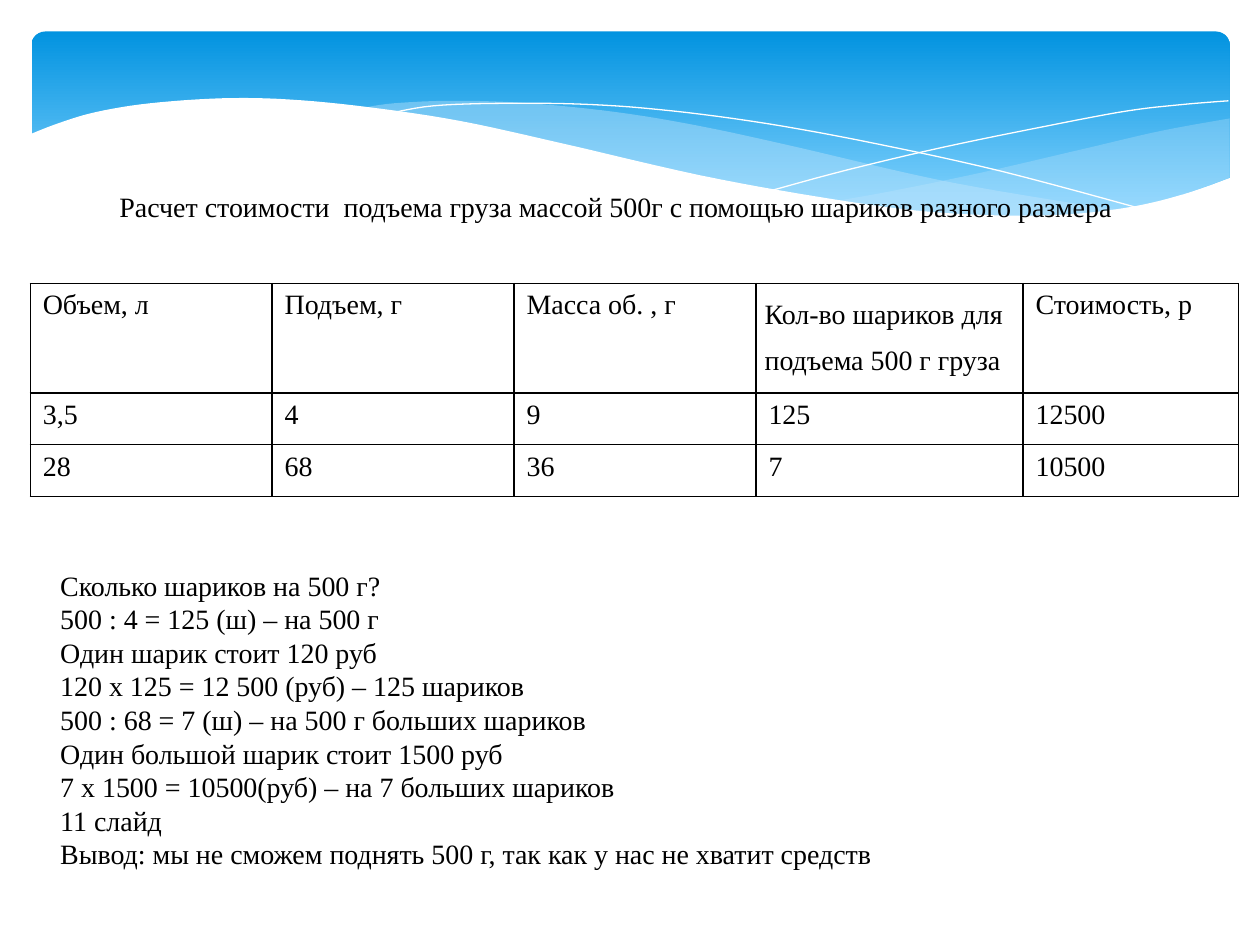
"""Build the slide on the cost of lifting 500 g with balloons."""
from lxml import etree
from pptx import Presentation, util as u
from pptx.dml.color import RGBColor
from pptx.enum import shapes
from pptx.oxml.ns import qn

INK = {"text": "000000", "paper": "FFFFFF", "top": "0293E0", "low": "83D3FE", "wave": "C6E7FC"}
FONT = "Times New Roman"
TITLE = [("\t", "Calibri", 18),
         ("Расчет стоимости  подъема груза массой 500г с помощью шариков разного размера", FONT, 16)]
ROWS = [
    ("Объем, л", "Подъем, г", "Масса об. , г", "Кол-во шариков для подъема 500 г груза", "Стоимость, р"),
    ("3,5", "4", "9", "125", "12500"),
    ("28", "68", "36", "7", "10500"),
]
WIDE = (1.92, 1.92, 1.92, 2.12, 1.71)
HIGH = (0.87, 0.41, 0.41)
NOTES = [
    "Сколько шариков на 500 г?",
    "500 : 4 = 125 (ш) – на 500 г",
    "Один шарик стоит 120 руб",
    "120 х 125 = 12 500 (руб) – 125 шариков",
    "500 : 68 = 7 (ш) – на 500 г больших шариков",
    "Один большой шарик стоит 1500 руб",
    "7 х 1500 = 10500(руб) – на 7 больших шариков",
    "11 слайд",
    "Вывод: мы не сможем поднять 500 г, так как у нас не хватит средств",
]
WAVES = [
    ("wave", 29, [
        [(9.76, 0.94), (9.21, 1.04), (8.61, 1.18), (7.79, 1.37), (7.06, 1.52), (6.61, 1.6)],
        [(6.61, 1.6), (7.19, 1.67), (7.69, 1.71), (8.24, 1.72), (8.72, 1.69), (9.21, 1.6), (9.76, 1.41)]]),
    ("wave", 40, [
        [(8.93, 1.67), (8.37, 1.59), (7.41, 1.42), (6.29, 1.16), (5.55, 1), (4.89, 0.89),
         (4.2, 0.82), (3.61, 0.8), (3.13, 0.82), (2.86, 0.86)],
        [(2.86, 0.86), (3.42, 0.94), (4.04, 1.06), (4.91, 1.26), (5.66, 1.43), (6.34, 1.56),
         (6.95, 1.65), (7.48, 1.7), (8.07, 1.73), (8.57, 1.71), (8.93, 1.67)]]),
    (None, 0, [
        [(3.09, 0.9), (3.44, 0.84), (4.01, 0.82), (4.69, 0.83), (5.33, 0.88), (6.08, 0.98),
         (6.95, 1.14), (7.95, 1.36), (9.07, 1.66)]]),
    (None, 0, [
        [(6.13, 1.51), (6.72, 1.35), (7.48, 1.17), (8.36, 0.99), (8.95, 0.88), (9.38, 0.83), (9.75, 0.8)]]),
    ("paper", 100, [
        [(9.77, 1.41), (9.4, 1.54), (8.99, 1.64), (8.5, 1.7), (7.93, 1.71), (7.26, 1.67),
         (6.48, 1.56), (5.55, 1.39), (4.47, 1.14), (3.65, 0.96), (2.92, 0.85), (2.3, 0.79),
         (1.77, 0.78), (1.19, 0.82), (0.76, 0.89), (0.46, 0.98), (0.23, 1.07)],
        [(0.23, 2.24), (9.77, 2.24)]]),
]


def tint(key):
    return RGBColor.from_string(INK[key])


def curve(pts, steps=6):
    if len(pts) == 2:
        return pts
    ends = [pts[0], *pts, pts[-1]]
    out = [pts[0]]
    for a, b, c, d in zip(ends, ends[1:], ends[2:], ends[3:]):
        for t in (n / steps for n in range(1, steps + 1)):
            out.append(tuple(
                (2 * q + (r - p) * t + (2 * p - 5 * q + 4 * r - s) * t ** 2
                 + (3 * q - p - 3 * r + s) * t ** 3) / 2
                for p, q, r, s in zip(a, b, c, d)))
    return out


def wave(slide, key, alpha, edges):
    pts = [(u.Inches(x), u.Inches(y)) for edge in edges for x, y in curve(edge)]
    pen = slide.shapes.build_freeform(*pts[0], scale=1.0)
    pen.add_line_segments(pts[1:], close=key is not None)
    form = pen.convert_to_shape()
    form.shadow.inherit = False
    if key is None:
        form.fill.background()
        form.line.color.rgb = tint("paper")
        form.line.width = u.Pt(0)
        return
    form.line.fill.background()
    form.fill.solid()
    form.fill.fore_color.rgb = tint(key)
    if alpha < 100:
        hue = form.fill._xPr.find(".//" + qn("a:srgbClr"))
        etree.SubElement(hue, qn("a:alpha"), val=str(alpha * 1000))


def banner(slide):
    box = slide.shapes.add_shape(shapes.MSO_SHAPE.ROUNDED_RECTANGLE,
                                 *map(u.Inches, (0.25, 0.25, 9.51, 1.56)))
    box.adjustments[0] = 0.07
    box.shadow.inherit = False
    box.line.fill.background()
    box.fill.gradient()
    box.fill.gradient_angle = 270
    for stop, key, spot in zip(box.fill.gradient_stops, ("top", "low"), (0, 0.9)):
        stop.color.rgb = tint(key)
        stop.position = spot


def write(para, words, font=FONT, size=16):
    run = para.add_run()
    run.text = words
    run.font.name = font
    run.font.size = u.Pt(size)
    run.font.color.rgb = tint("text")


def textbox(slide, at, paras):
    frame = slide.shapes.add_textbox(*map(u.Inches, at)).text_frame
    frame.word_wrap = True
    for i, runs in enumerate(paras):
        para = frame.add_paragraph() if i else frame.paragraphs[0]
        for run in runs:
            write(para, *run)


def border(cell):
    props = cell._tc.get_or_add_tcPr()
    for side in "LRTB":
        line = etree.SubElement(props, qn("a:ln" + side), w=str(u.Pt(1)))
        fill = etree.SubElement(line, qn("a:solidFill"))
        etree.SubElement(fill, qn("a:srgbClr"), val=INK["text"])


def prices(slide):
    at = (0.24, 2.25, sum(WIDE), sum(HIGH))
    table = slide.shapes.add_table(len(ROWS), len(WIDE), *map(u.Inches, at)).table
    table.first_row = table.horz_banding = False
    for col, wide in zip(table.columns, WIDE):
        col.width = u.Inches(wide)
    for row, high, words in zip(table.rows, HIGH, ROWS):
        row.height = u.Inches(high)
        for cell, word in zip(row.cells, words):
            border(cell)
            cell.fill.background()
            write(cell.text_frame.paragraphs[0], word)
    count = table.cell(0, 3)
    count.margin_left = count.margin_right = u.Inches(0.07)
    count.margin_top = count.margin_bottom = 0
    count.text_frame.paragraphs[0].line_spacing = 1.5


def main():
    deck = Presentation()
    deck.slide_width, deck.slide_height = u.Inches(10), u.Inches(7.5)
    slide = deck.slides.add_slide(deck.slide_layouts[6])
    banner(slide)
    for item in WAVES:
        wave(slide, *item)
    textbox(slide, (0.35, 1.43, 9.37, 0.4), [TITLE])
    prices(slide)
    textbox(slide, (0.38, 4.46, 8.9, 2.52), [[(line,)] for line in NOTES])
    deck.save("out.pptx")


if __name__ == "__main__":
    main()
